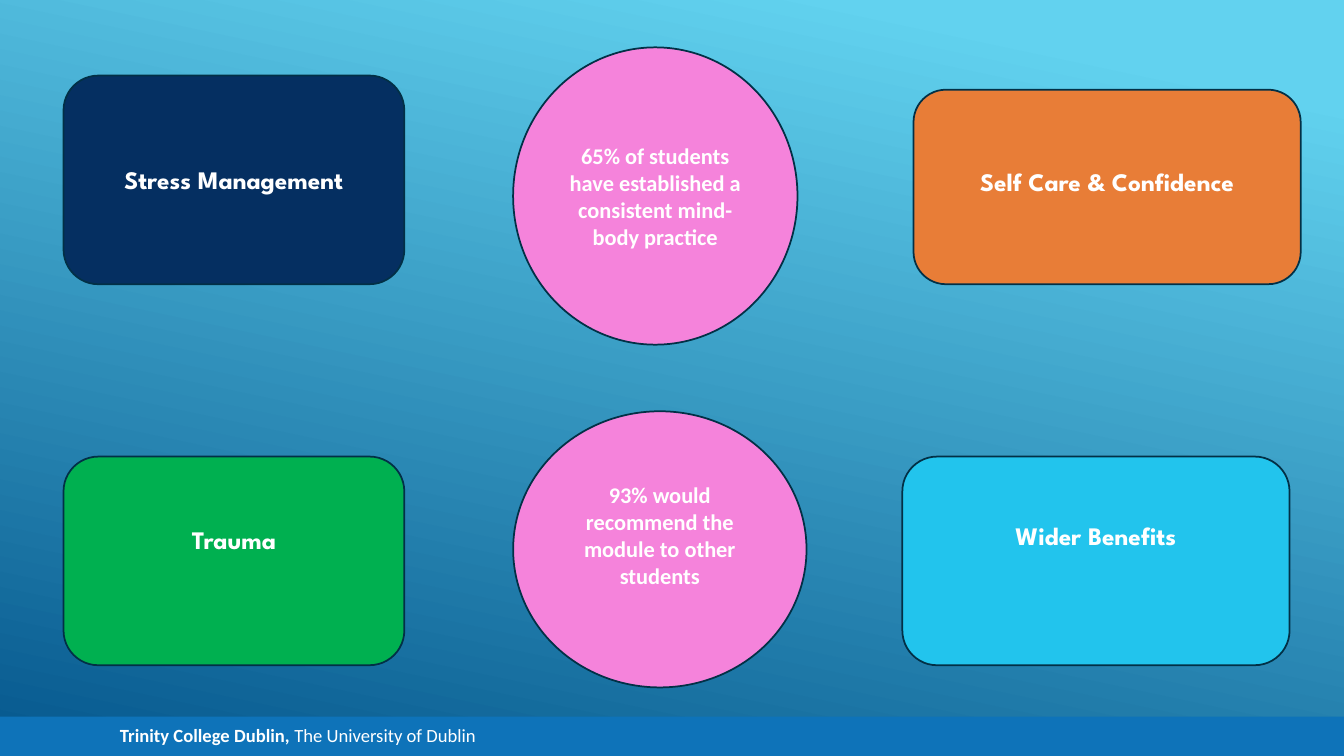
import pptx
import pptx.dml.color
import pptx.enum.shapes
import pptx.enum.text
import pptx.util

SHAPES = pptx.enum.shapes.MSO_SHAPE
ALIGN = pptx.enum.text.PP_ALIGN
ANCHOR = pptx.enum.text.MSO_ANCHOR


def color(hex_code):
    return pptx.dml.color.RGBColor.from_string(hex_code)


class SlideBuilder:
    """Draws on one slide; lengths are percentages of its width and height."""

    outline = "023046"
    white = "FFFFFF"
    body_font = "Calibri"
    label_font = "League Spartan"

    def __init__(self, deck):
        self.deck = deck
        self.page = deck.slides.add_slide(deck.slide_layouts[6])

    def across(self, share):
        return round(self.deck.slide_width * share / 100)

    def down(self, share):
        return round(self.deck.slide_height * share / 100)

    def background(self, start, end):
        fill = self.page.background.fill
        fill.gradient()
        # Angles here run counter-clockwise.
        fill.gradient_angle = 258
        for stop, position, shade in zip(fill.gradient_stops, (0.1, 1), (start, end)):
            stop.position = position
            stop.color.rgb = color(shade)

    def shape(self, kind, left, top, width, height, fill):
        box = self.page.shapes.add_shape(
            kind, self.across(left), self.down(top), self.across(width), self.down(height))
        box.shadow.inherit = False
        box.fill.solid()
        box.fill.fore_color.rgb = color(fill)
        box.text_frame.word_wrap = True
        return box

    def add_run(self, para, text, font, size, bold=True):
        span = para.add_run()
        span.text = text
        span.font.name = font
        span.font.size = pptx.util.Pt(size)
        span.font.bold = bold
        span.font.color.rgb = color(self.white)

    def bubble(self, kind, place, fill, text, font, size, lift):
        """Outlined shape with centred text; lift is extra space kept below it."""
        box = self.shape(kind, *place, fill)
        box.line.color.rgb = color(self.outline)
        box.line.width = pptx.util.Pt(1.25)
        frame = box.text_frame
        frame.vertical_anchor = ANCHOR.MIDDLE
        frame.margin_bottom = frame.margin_top + self.down(lift)
        para = frame.paragraphs[0]
        para.alignment = ALIGN.CENTER
        self.add_run(para, text, font, size)

    def theme(self, place, fill, text, lift=0):
        self.bubble(SHAPES.ROUNDED_RECTANGLE, place, fill, text, self.label_font, 18, lift)

    def statistic(self, place, text, lift=0):
        self.bubble(SHAPES.OVAL, place, "F583DB", text, self.body_font, 16, lift)

    def footer(self, name, detail):
        bar = self.shape(SHAPES.RECTANGLE, 0, 94.8, 100, 5.2, "0E73B9")
        bar.line.fill.background()
        frame = bar.text_frame
        frame.vertical_anchor = ANCHOR.TOP
        frame.margin_left = self.across(8.93)
        frame.margin_top = frame.margin_bottom = pptx.util.Inches(0.07)
        para = frame.paragraphs[0]
        para.alignment = ALIGN.LEFT
        self.add_run(para, name, self.body_font, 13.3)
        self.add_run(para, detail, self.body_font, 13.3, bold=False)


def main():
    deck = pptx.Presentation()
    deck.slide_width = pptx.util.Inches(13.33)
    deck.slide_height = pptx.util.Inches(7.5)
    slide = SlideBuilder(deck)
    slide.background("62D2EF", "05578D")
    slide.footer("Trinity College Dublin, ", "The University of Dublin")

    left, middle, lower = 4.73, 38.18, 60.4
    narrow, wide, tall = 25.36, 28.81, 27.6
    slide.theme((left, 10, narrow, tall), "052F61", "Stress Management")
    slide.theme((67.97, 11.87, wide, 25.73), "E87D37", "Self Care & Confidence", 1.5)
    slide.theme((67.14, lower, wide, tall), "22C4ED", "Wider Benefits", 6.7)
    slide.theme((left, lower, narrow, tall), "00B050", "Trauma", 5.7)
    slide.statistic((middle, 6.27, 21.16, 39.33),
                    "65% of students have established a consistent mind-body practice")
    slide.statistic((middle, 54.4, 21.83, 36.53),
                    "93% would recommend the module to other students", 3.7)
    deck.save("out.pptx")


if __name__ == "__main__":
    main()
